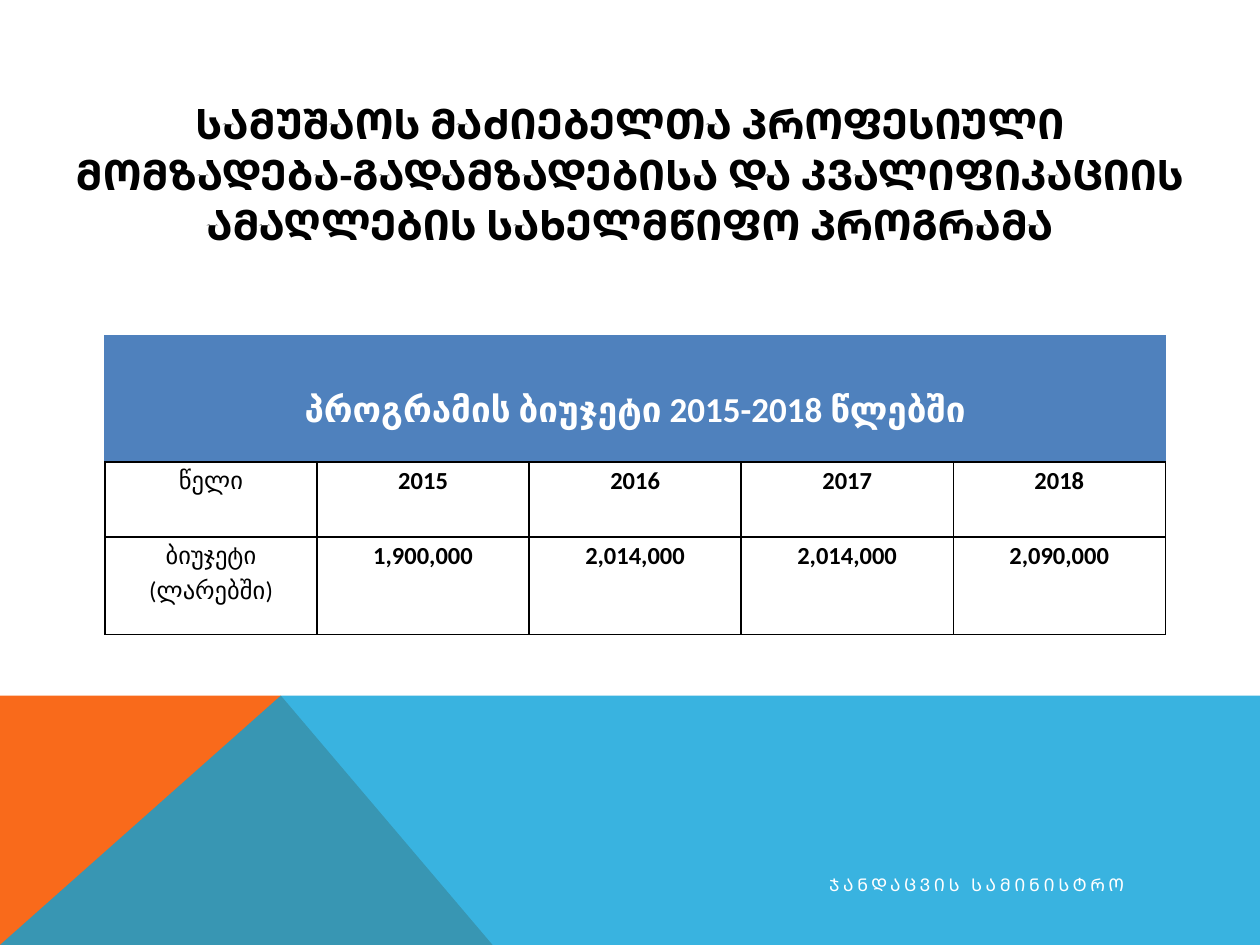
from lxml.etree import SubElement
from pptx import Presentation
from pptx.dml.color import RGBColor
from pptx.enum.text import MSO_ANCHOR, PP_ALIGN
from pptx.oxml.ns import qn
from pptx.util import Pt

BLACK = "000000"
WHITE = "FFFFFF"
HEADER_BLUE = "4F81BD"
ORANGE = "F96A1B"
SKY_BLUE = "08A1D9"


def color(hex_string):
    """Turn a hex string into a colour."""
    return RGBColor.from_string(hex_string)


def write_text(frame, text, size, text_color, align, font="Calibri", bold=False):
    """Write one run in the first paragraph of a frame and return the run."""
    frame.word_wrap = True
    paragraph = frame.paragraphs[0]
    paragraph.alignment = align
    run = paragraph.add_run()
    run.text = text
    run.font.size = Pt(size)
    run.font.name = font
    run.font.bold = bold
    run.font.color.rgb = color(text_color)
    return run


def add_polygon(slide, left, top, points, fill, alpha=100):
    """Draw a filled outline whose points are relative to left and top."""
    corners = [(Pt(left + x), Pt(top + y)) for x, y in points]
    builder = slide.shapes.build_freeform(*corners[0])
    builder.add_line_segments(corners[1:], close=True)
    shape = builder.convert_to_shape()
    shape.shadow.inherit = False
    shape.line.fill.background()
    shape.fill.solid()
    shape.fill.fore_color.rgb = color(fill)
    if alpha < 100:
        fill_color = next(shape.element.spPr.iter(qn("a:srgbClr")))
        SubElement(fill_color, qn("a:alpha"), val=str(alpha * 1000))


def add_band(slide, left, top, width, height):
    """Draw the two overlapping shapes along the bottom edge."""
    peak = (160.5, 0)
    add_polygon(slide, left, top,
                [(0, height), (0, 0), peak, (281.5, height)], ORANGE)
    add_polygon(slide, left, top,
                [(0, height), peak, (width, 0), (width, height)], SKY_BLUE, 80)


def add_title(slide, left, top, width, height):
    """Place the centred programme title."""
    shape = slide.shapes.add_textbox(Pt(left), Pt(top), Pt(width), Pt(height))
    frame = shape.text_frame
    frame.vertical_anchor = MSO_ANCHOR.MIDDLE
    title = ("ᲡᲐᲛᲣᲨᲐᲝᲡ ᲛᲐᲫᲘᲔᲑᲔᲚᲗᲐ ᲞᲠᲝᲤᲔᲡᲘᲣᲚᲘ ᲛᲝᲛᲖᲐᲓᲔᲑᲐ-ᲒᲐᲓᲐᲛᲖᲐᲓᲔᲑᲘᲡᲐ "
             "ᲓᲐ ᲙᲕᲐᲚᲘᲤᲘᲙᲐᲪᲘᲘᲡ ᲐᲛᲐᲦᲚᲔᲑᲘᲡ ᲡᲐᲮᲔᲚᲛᲬᲘᲤᲝ ᲞᲠᲝᲒᲠᲐᲛᲐ")
    write_text(frame, title, 24, BLACK, PP_ALIGN.CENTER, bold=True)


def style_cell(cell, borders, fill=None):
    """Set the borders, fill and margins of a cell."""
    properties = cell._tc.get_or_add_tcPr()
    for side, border_color in zip("LRTB", borders):
        line = SubElement(properties, qn(f"a:ln{side}"), w=str(Pt(1)))
        solid = SubElement(line, qn("a:solidFill"))
        SubElement(solid, qn("a:srgbClr"), val=border_color)
    if fill:
        cell.fill.solid()
        cell.fill.fore_color.rgb = color(fill)
    else:
        cell.fill.background()
    cell.margin_left = cell.margin_right = Pt(5)
    cell.margin_top = cell.margin_bottom = 0


def write_cell(cell, text, size, text_color, bold):
    """Write centred text in a cell."""
    write_text(cell.text_frame, text, size, text_color, PP_ALIGN.CENTER, bold=bold)
    cell.text_frame.paragraphs[0].line_spacing = 1.15


def add_budget_table(slide, left, top, width, row_heights):
    """Place the budget table with its merged heading row."""
    rows = [
        ["წელი", "2015", "2016", "2017", "2018"],
        ["ბიუჯეტი (ლარებში)", "1,900,000", "2,014,000", "2,014,000", "2,090,000"],
    ]
    count = len(rows[0])
    table = slide.shapes.add_table(
        len(row_heights), count, Pt(left), Pt(top), Pt(width), Pt(sum(row_heights))
    ).table
    table.first_row = table.horz_banding = False
    for column in table.columns:
        column.width = Pt(width / count)
    for row, height in zip(table.rows, row_heights):
        row.height = Pt(height)

    for index in range(count):
        style_cell(table.cell(0, index), [HEADER_BLUE] * 3 + [BLACK], HEADER_BLUE)
    heading = table.cell(0, 0)
    heading.merge(table.cell(0, count - 1))
    heading.margin_top = Pt(27)
    write_cell(heading, "პროგრამის ბიუჯეტი 2015-2018 წლებში", 20, WHITE, True)

    for row_index, values in enumerate(rows, start=1):
        for column_index, value in enumerate(values):
            cell = table.cell(row_index, column_index)
            style_cell(cell, [BLACK] * 4)
            write_cell(cell, value, 14, BLACK, column_index > 0)


def add_footer(slide, left, top, width, height):
    """Place the ministry name with wide letter spacing."""
    shape = slide.shapes.add_textbox(Pt(left), Pt(top), Pt(width), Pt(height))
    frame = shape.text_frame
    frame.vertical_anchor = MSO_ANCHOR.MIDDLE
    run = write_text(frame, "ᲯᲐᲜᲓᲐᲪᲕᲘᲡ ᲡᲐᲛᲘᲜᲘᲡᲢᲠᲝ", 10, WHITE, PP_ALIGN.RIGHT, "Roboto")
    run.font._element.set("spc", "200")


def main():
    """Build and save the slide."""
    presentation = Presentation()
    presentation.slide_width = Pt(720)
    presentation.slide_height = Pt(540)
    slide = presentation.slides.add_slide(presentation.slide_layouts[6])
    add_band(slide, 0, 397.5, 720, 142.5)
    add_title(slide, 36, 54, 648, 90)
    add_budget_table(slide, 60, 192, 606, [72, 43, 55.5])
    add_footer(slide, 277, 494.5, 372.5, 21.5)
    presentation.save("out.pptx")


if __name__ == "__main__":
    main()
